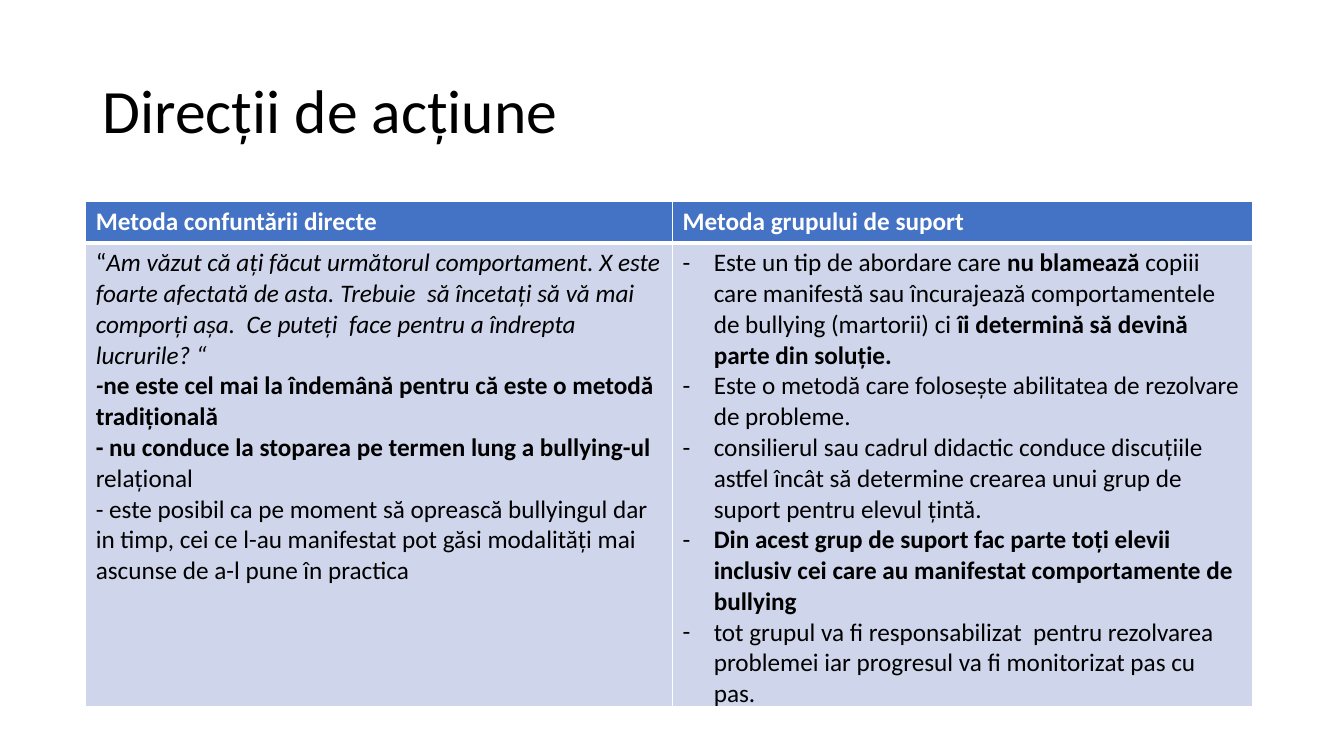
"""Build the slide comparing two methods of acting against bullying."""
from dataclasses import dataclass

from lxml import etree
from pptx import Presentation
from pptx.dml.color import RGBColor
from pptx.enum.text import MSO_ANCHOR
from pptx.oxml.ns import qn
from pptx.util import Inches, Pt

MIDDLE = MSO_ANCHOR.MIDDLE
FONT = "Calibri"
BLACK, WHITE, BLUE, PALE_BLUE = "000000", "FFFFFF", "4472C4", "CFD5EA"
THIN, THICK = 1, 3
DASH_INDENT = Inches(0.31)


@dataclass(frozen=True)
class Words:
    text: str
    bold: bool = False
    italic: bool = False


@dataclass(frozen=True)
class Method:
    name: str
    width: float
    points: tuple[tuple[Words, ...], ...]
    dashed: bool = False


CONFRONTATION = Method("Metoda confuntării directe", 5.82, (
    (Words("“"),
     Words("Am văzut că ați făcut următorul comportament. X este foarte afectată de asta. "
           "Trebuie  să încetați să vă mai comporți așa.  Ce puteți  face pentru a îndrepta "
           "lucrurile? “", italic=True)),
    (Words("-", bold=True, italic=True),
     Words("ne este cel mai la îndemână pentru că este o metodă tradițională", bold=True)),
    (Words("- nu conduce la stoparea pe termen lung a bullying-ul ", bold=True),
     Words("relațional")),
    (Words("- este posibil ca pe moment să oprească bullyingul dar in timp, cei ce l-au "
           "manifestat pot găsi modalități mai ascunse de a-l pune în practica"),),
))

SUPPORT_GROUP = Method("Metoda grupului de suport", 5.75, (
    (Words("Este un tip de abordare care "),
     Words("nu blamează ", bold=True),
     Words("copiii care manifestă sau încurajează comportamentele de bullying (martorii) ci "),
     Words("îi determină să devină parte din soluție.", bold=True)),
    (Words("Este o metodă care folosește abilitatea de rezolvare de probleme."),),
    (Words("consilierul sau cadrul didactic conduce discuțiile astfel încât să determine "
           "crearea unui grup de suport pentru elevul țintă."),),
    (Words("Din acest grup de suport fac parte toți elevii inclusiv cei care au manifestat "
           "comportamente de bullying", bold=True),),
    (Words("tot grupul va fi responsabilizat  pentru rezolvarea problemei iar progresul va fi "
           "monitorizat pas cu pas."),),
), dashed=True)

METHODS = (CONFRONTATION, SUPPORT_GROUP)
HEADER_HEIGHT, BODY_HEIGHT = 0.41, 4.6


def rgb(value: str) -> RGBColor:
    """Turn a hex string into a colour."""
    return RGBColor.from_string(value)


def add_words(paragraph, text: str, *, size: float = 18, color: str = BLACK,
              bold: bool = False, italic: bool = False) -> None:
    """Append one formatted run to a paragraph."""
    run = paragraph.add_run()
    run.text = text
    font = run.font
    font.name, font.size = FONT, Pt(size)
    font.bold, font.italic = bold, italic
    font.color.rgb = rgb(color)


def add_dash(paragraph) -> None:
    """Give a paragraph a hanging dash bullet."""
    properties = paragraph._p.get_or_add_pPr()
    properties.set("marL", str(DASH_INDENT))
    properties.set("indent", str(-DASH_INDENT))
    etree.SubElement(properties, qn("a:buFont"), typeface=FONT)
    etree.SubElement(properties, qn("a:buChar"), char="-")


def style_cell(cell, fill: str, top: float, bottom: float) -> None:
    """Fill a cell and draw its white borders."""
    cell.fill.solid()
    cell.fill.fore_color.rgb = rgb(fill)
    properties = cell._tc.get_or_add_tcPr()
    borders = (("L", THIN), ("R", THIN), ("T", top), ("B", bottom))
    for position, (side, width) in enumerate(borders):
        border = etree.Element(qn(f"a:ln{side}"), w=str(Pt(width)))
        paint = etree.SubElement(border, qn("a:solidFill"))
        etree.SubElement(paint, qn("a:srgbClr"), val=WHITE)
        properties.insert(position, border)


def add_title(slide, text: str) -> None:
    """Place the slide heading."""
    box = slide.shapes.add_textbox(Inches(0.92), Inches(0.4), Inches(11.5), Inches(1.45))
    frame = box.text_frame
    frame.word_wrap = True
    frame.vertical_anchor = MIDDLE
    heading = frame.paragraphs[0]
    heading.line_spacing = 0.9
    add_words(heading, text, size=44)


def fill_method(table, column: int, method: Method) -> None:
    """Write one method into its table column."""
    table.columns[column].width = Inches(method.width)
    header, body = table.cell(0, column), table.cell(1, column)
    style_cell(header, BLUE, THIN, THICK)
    style_cell(body, PALE_BLUE, THICK, THIN)
    add_words(header.text_frame.paragraphs[0], method.name, color=WHITE, bold=True)
    frame = body.text_frame
    for index, point in enumerate(method.points):
        paragraph = frame.add_paragraph() if index else frame.paragraphs[0]
        if method.dashed:
            add_dash(paragraph)
        for words in point:
            add_words(paragraph, words.text, bold=words.bold, italic=words.italic)


def add_comparison(slide, methods: tuple[Method, ...]) -> None:
    """Place the table with one column per method."""
    width = sum(method.width for method in methods)
    table = slide.shapes.add_table(
        2, len(methods), Inches(0.85), Inches(2), Inches(width),
        Inches(HEADER_HEIGHT + BODY_HEIGHT)).table
    table.horz_banding = False
    for row, height in zip(table.rows, (HEADER_HEIGHT, BODY_HEIGHT)):
        row.height = Inches(height)
    for column, method in enumerate(methods):
        fill_method(table, column, method)


def main() -> None:
    """Create and save the presentation."""
    deck = Presentation()
    deck.slide_width, deck.slide_height = Inches(13.33), Inches(7.5)
    slide = deck.slides.add_slide(deck.slide_layouts[6])
    add_title(slide, "Direcții de acțiune")
    add_comparison(slide, METHODS)
    deck.save("out.pptx")


if __name__ == "__main__":
    main()
